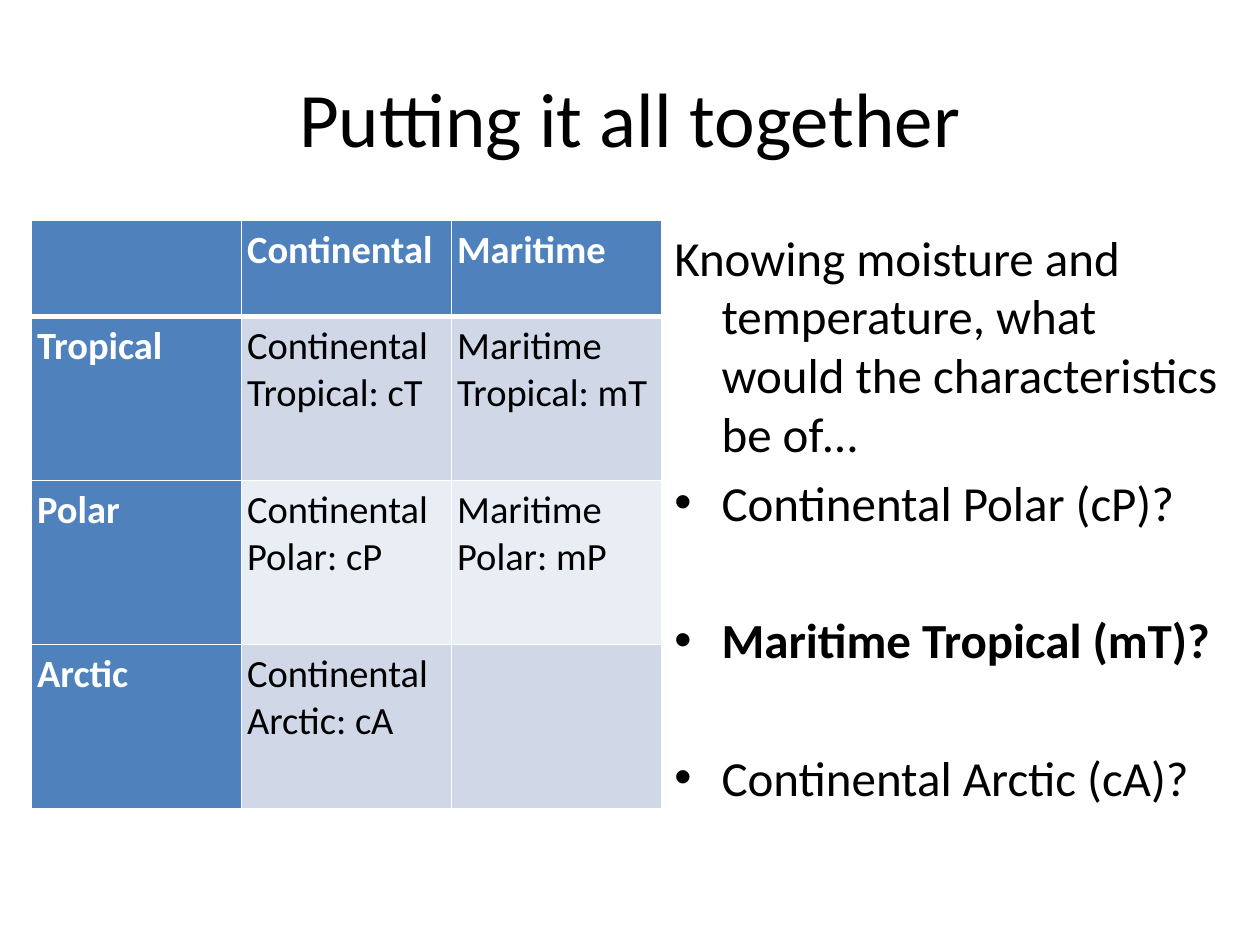
"""Build a slide that sorts air masses by moisture and temperature."""
from lxml import etree
from pptx import Presentation
from pptx import util as u
from pptx.dml.color import RGBColor
from pptx.enum import text
from pptx.oxml.ns import qn

TITLE = "Putting it all together"
ROWS = [
    ["", "Continental", "Maritime"],
    ["Tropical", "Continental Tropical: cT", "Maritime Tropical: mT"],
    ["Polar", "Continental Polar: cP", "Maritime Polar: mP"],
    ["Arctic", "Continental Arctic: cA", ""],
]
QUESTION = "Knowing moisture and temperature, what would the characteristics be of…"
AIR_MASSES = [
    ("Continental Polar (cP)?", False),
    ("Maritime Tropical (mT)?", True),
    ("Continental Arctic (cA)?", False),
]
THEME = {
    "font": "Calibri", "title": 44, "body": 28, "cell": 22,
    "ink": "000000", "paper": "FFFFFF", "head": "4F81BD",
    "bands": ("D0D8E8", "E9EDF4"),
    "tight": 5.6, "loose": 45,
}
TITLE_BOX = (1.27, 0.76, 22.86, 3.18)
TABLE_BOX = (0.64, 4.45, 12.7, 11.85)
BODY_BOX = (13.34, 4.45, 11.64, 12.57)
HEAD_HEIGHT = 1.93


def style(p, size, color="ink", bold=False):
    f = p.font
    f.name, f.size, f.bold = THEME["font"], u.Pt(size), bold
    f.color.rgb = RGBColor.from_string(THEME[color])


def place(sp, box):
    sp.left, sp.top, sp.width, sp.height = map(u.Cm, box)


def border(cell, side, points):
    ln = etree.SubElement(cell._tc.get_or_add_tcPr(), qn(f"a:ln{side}"), w=str(u.Pt(points)))
    fill = etree.SubElement(ln, qn("a:solidFill"))
    etree.SubElement(fill, qn("a:srgbClr"), val=THEME["paper"])


def add_title(s):
    sp = s.shapes.title
    place(sp, TITLE_BOX)
    tf = sp.text_frame
    tf.text, tf.vertical_anchor = TITLE, text.MSO_ANCHOR.MIDDLE
    p = tf.paragraphs[0]
    p.alignment = text.PP_ALIGN.CENTER
    style(p, THEME["title"])


def add_table(s):
    n_rows, n_cols = len(ROWS), len(ROWS[0])
    tbl = s.shapes.add_table(n_rows, n_cols, *map(u.Cm, TABLE_BOX)).table
    tbl.first_col = True
    for col in tbl.columns:
        col.width = u.Cm(TABLE_BOX[2] / n_cols)
    for i, row in enumerate(ROWS):
        body_height = (TABLE_BOX[3] - HEAD_HEIGHT) / (n_rows - 1)
        tbl.rows[i].height = u.Cm(body_height if i else HEAD_HEIGHT)
        for j, words in enumerate(row):
            cell = tbl.cell(i, j)
            head = i == 0 or j == 0
            cell.margin_left = cell.margin_right = u.Cm(0.11)
            cell.margin_top = cell.margin_bottom = u.Cm(0.13)
            for side in "LRTB":
                thick = (i, side) in ((0, "B"), (1, "T"))
                border(cell, side, 3 if thick else 1)
            cell.fill.solid()
            color = THEME["head"] if head else THEME["bands"][(i - 1) % 2]
            cell.fill.fore_color.rgb = RGBColor.from_string(color)
            cell.text = words
            style(cell.text_frame.paragraphs[0], THEME["cell"], "paper" if head else "ink", head)


def add_questions(s):
    sp = s.placeholders[1]
    place(sp, BODY_BOX)
    tf = sp.text_frame
    tf.auto_size = text.MSO_AUTO_SIZE.NONE
    p = tf.paragraphs[0]
    p.text, p.space_before = QUESTION, u.Pt(THEME["tight"])
    etree.SubElement(p._p.get_or_add_pPr(), qn("a:buNone"))
    style(p, THEME["body"])
    for i, (words, bold) in enumerate(AIR_MASSES):
        p = tf.add_paragraph()
        p.text, p.space_before = words, u.Pt(THEME["loose" if i else "tight"])
        style(p, THEME["body"], bold=bold)


def main():
    prs = Presentation()
    prs.slide_width, prs.slide_height = u.Cm(25.4), u.Cm(19.05)
    s = prs.slides.add_slide(prs.slide_layouts[1])
    add_title(s)
    add_table(s)
    add_questions(s)
    prs.save("out.pptx")


if __name__ == "__main__":
    main()
